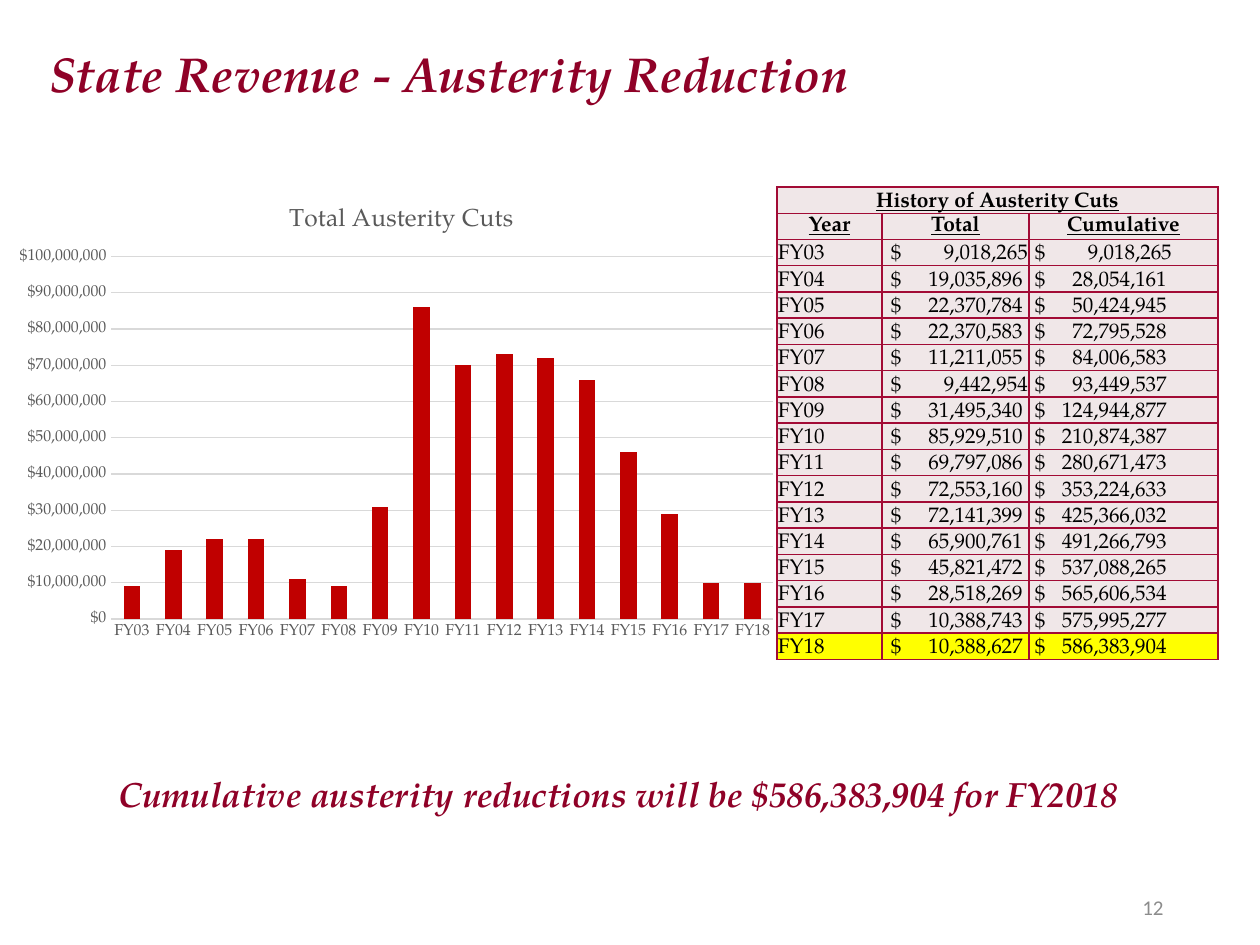
from itertools import accumulate

from lxml import etree
from pptx import Presentation
from pptx.chart.data import CategoryChartData
from pptx.dml.color import RGBColor
from pptx.enum.chart import XL_CHART_TYPE, XL_TICK_MARK
from pptx.enum.text import MSO_ANCHOR, PP_ALIGN
from pptx.oxml import parse_xml
from pptx.oxml.ns import nsdecls, qn
from pptx.util import Emu, Pt

PX = 914400 // 126
SERIF = "TeX Gyre Pagella"
MAROON = RGBColor(0x8F, 0x01, 0x27)
BORDER = RGBColor(0xA2, 0x0B, 0x35)
BAR_RED = RGBColor(0xC0, 0x00, 0x00)
PALE = RGBColor(0xF0, 0xE7, 0xE8)
YELLOW = RGBColor(0xFF, 0xFF, 0x00)
BLACK = RGBColor(0x00, 0x00, 0x00)
AXIS_GREY = RGBColor(0x59, 0x59, 0x59)
GRID_GREY = RGBColor(0xD9, 0xD9, 0xD9)
PAGE_GREY = RGBColor(0x8C, 0x8C, 0x8C)

CUTS = [9018265, 19035896, 22370784, 22370583, 11211055, 9442954,
        31495340, 85929510, 69797086, 72553160, 72141399, 65900761,
        45821472, 28518269, 10388743, 10388627]
YEARS = [f"FY{year:02d}" for year in range(3, 19)]


def px(length):
    return Emu(length * PX)


def style(font, size, color, name=SERIF, bold=False, italic=False):
    font.name, font.size = name, Pt(size)
    font.bold, font.italic = bold, italic
    font.color.rgb = color


def add_text(slide, box, text, size, color, align=PP_ALIGN.LEFT,
             anchor=MSO_ANCHOR.TOP, **look):
    frame = slide.shapes.add_textbox(*map(px, box)).text_frame
    frame.word_wrap = True
    frame.vertical_anchor = anchor
    frame.text = text
    paragraph = frame.paragraphs[0]
    paragraph.alignment = align
    style(paragraph.runs[0].font, size, color, **look)
    return paragraph


def set_layout(element, **fractions):
    """Fix the place of a chart part, in fractions of the chart."""
    old = element.find(qn("c:layout"))
    if old is not None:
        element.remove(old)
    layout = parse_xml(f"<c:layout {nsdecls('c')}><c:manualLayout/></c:layout>")
    manual = layout[0]
    if "w" in fractions:
        etree.SubElement(manual, qn("c:layoutTarget")).set("val", "inner")
    for tag in ("xMode", "yMode"):
        etree.SubElement(manual, qn(f"c:{tag}")).set("val", "edge")
    for tag, value in fractions.items():
        etree.SubElement(manual, qn(f"c:{tag}")).set("val", str(value))
    rich = element.find(qn("c:tx"))
    element.insert(0 if rich is None else 1, layout)


def add_cuts_chart(slide, box):
    cuts_data = CategoryChartData()
    cuts_data.categories = YEARS
    cuts_data.add_series("Series 1", [round(cut, -6) for cut in CUTS])
    chart = slide.shapes.add_chart(
        XL_CHART_TYPE.COLUMN_CLUSTERED, *map(px, box), cuts_data).chart
    style(chart.font, 9, AXIS_GREY)
    chart.has_legend = False

    # Chart title
    title = chart.chart_title
    title.text_frame.text = "Total Austerity Cuts"
    style(title.text_frame.paragraphs[0].runs[0].font, 14, AXIS_GREY)
    set_layout(title._element, x=0.36, y=0.04)

    # Bars
    plot = chart.plots[0]
    plot.gap_width = 150
    plot.vary_by_categories = False
    bars = plot.series[0].format.fill
    bars.solid()
    bars.fore_color.rgb = BAR_RED
    set_layout(chart._chartSpace.chart.plotArea, x=0.14, y=0.16, w=0.84, h=0.78)

    # Axes
    for axis in (chart.category_axis, chart.value_axis):
        axis.major_tick_mark = axis.minor_tick_mark = XL_TICK_MARK.NONE
        axis.format.line.fill.background()
        style(axis.tick_labels.font, 9, AXIS_GREY)
    amounts = chart.value_axis
    amounts.minimum_scale, amounts.maximum_scale = 0, 100_000_000
    amounts.major_unit = 10_000_000
    amounts.tick_labels.number_format = '"$"#,##0'
    amounts.tick_labels.number_format_is_linked = False
    amounts.major_gridlines.format.line.color.rgb = GRID_GREY
    amounts.major_gridlines.format.line.width = Pt(0.75)


def add_borders(cell):
    properties = cell._tc.get_or_add_tcPr()
    for side in ("lnL", "lnR", "lnT", "lnB"):
        properties.append(parse_xml(
            f'<a:{side} {nsdecls("a")} w="12700"><a:solidFill>'
            f'<a:srgbClr val="{BORDER}"/></a:solidFill></a:{side}>'))


def fill_cell(cell, text, color, heading=False, left=1, tab=None):
    cell.fill.solid()
    cell.fill.fore_color.rgb = color
    cell.margin_left, cell.margin_right = px(left), px(1)
    cell.margin_top, cell.margin_bottom = px(1), 0
    cell.vertical_anchor = MSO_ANCHOR.MIDDLE if heading else MSO_ANCHOR.BOTTOM
    paragraph = cell.text_frame.paragraphs[0]
    paragraph.text = text
    if tab:
        paragraph._p.get_or_add_pPr().append(parse_xml(
            f'<a:tabLst {nsdecls("a")}><a:tab pos="{px(tab)}" algn="r"/></a:tabLst>'))
    if heading:
        paragraph.alignment = PP_ALIGN.CENTER
    for run in paragraph.runs:
        style(run.font, 12, BLACK, bold=heading)
        run.font.underline = heading


def fill_amount(cell, amount, color, left):
    """Dollar sign at the left; amounts below ten million end further right."""
    tab = 137 if amount < 10_000_000 else 132
    fill_cell(cell, f"$\t{amount:,}", color, left=left, tab=tab)


def add_history_table(slide, box):
    row_count = len(YEARS) + 2
    table = slide.shapes.add_table(row_count, 3, *map(px, box)).table
    for column, width in zip(table.columns, (105, 147, 189)):
        column.width = px(width)
    for row in table.rows:
        row.height = px(box[3]) // row_count
        for cell in row.cells:
            add_borders(cell)

    # Headings
    heading = table.cell(0, 0)
    heading.merge(table.cell(0, 2))
    fill_cell(heading, "History of Austerity Cuts", PALE, heading=True)
    heading.vertical_anchor = MSO_ANCHOR.BOTTOM
    for column, name in enumerate(("Year", "Total", "Cumulative")):
        fill_cell(table.cell(1, column), name, PALE, heading=True)

    # One row a year, the last one highlighted
    history = zip(YEARS, CUTS, accumulate(CUTS))
    for row, (year, total, cumulative) in enumerate(history, start=2):
        color = YELLOW if row == row_count - 1 else PALE
        fill_cell(table.cell(row, 0), year, color)
        fill_amount(table.cell(row, 1), total, color, left=9)
        fill_amount(table.cell(row, 2), cumulative, color, left=6)


def build_austerity_slide(slide):
    add_text(slide, (1113, 882, 63, 50), "12", 12, PAGE_GREY, PP_ALIGN.RIGHT,
             MSO_ANCHOR.MIDDLE, name="Calibri")
    add_text(slide, (37, 37, 1071, 170), "State Revenue - Austerity Reduction",
             28, MAROON, bold=True, italic=True)
    add_history_table(slide, (777, 187, 441, 473))
    summary = add_text(
        slide, (41, 758, 1155, 63),
        "Cumulative austerity reductions will be $586,383,904 for FY2018",
        20, MAROON, PP_ALIGN.CENTER, bold=True, italic=True)
    summary.line_spacing = 1.2
    add_cuts_chart(slide, (1, 182, 788, 465))


def main():
    deck = Presentation()
    deck.slide_width, deck.slide_height = px(1260), px(945)
    build_austerity_slide(deck.slides.add_slide(deck.slide_layouts[6]))
    deck.save("out.pptx")


if __name__ == "__main__":
    main()
